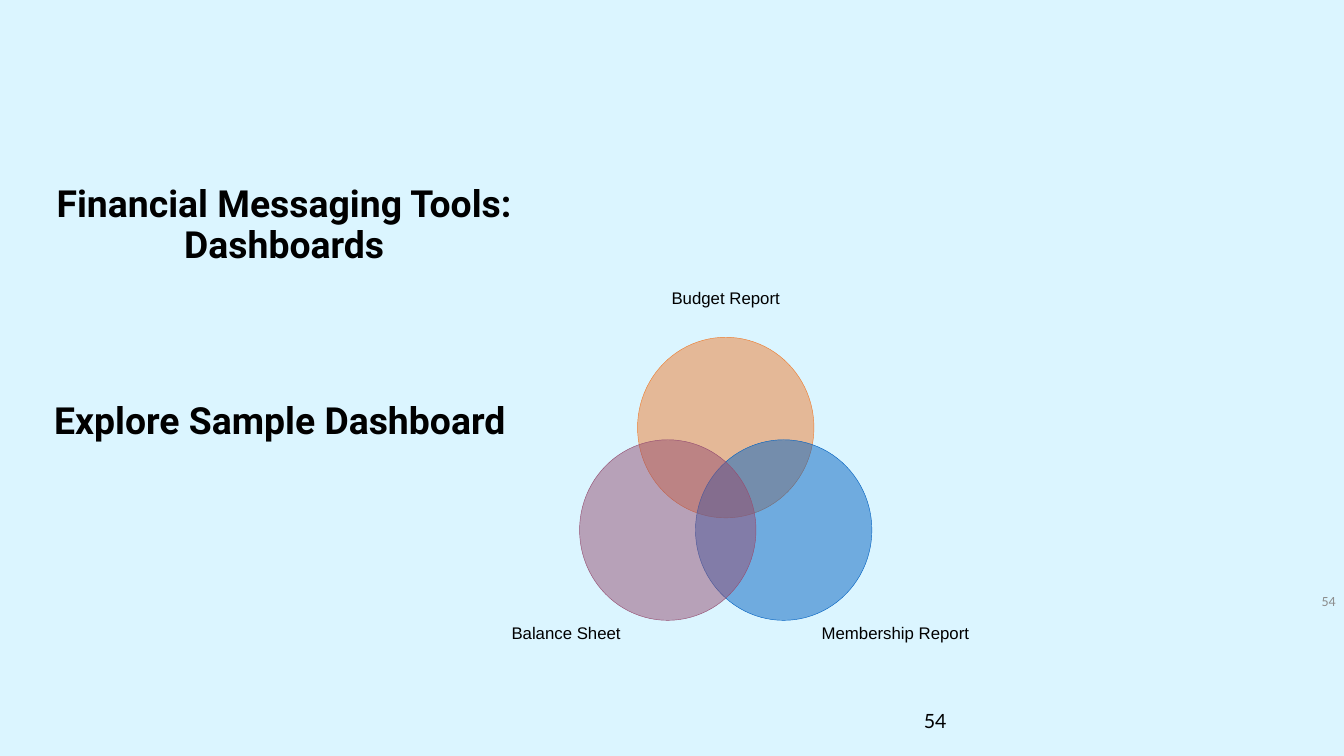
from lxml.etree import SubElement
from pptx import Presentation
from pptx.dml.color import RGBColor
from pptx.enum.shapes import MSO_SHAPE
from pptx.enum.text import MSO_ANCHOR, MSO_AUTO_SIZE, PP_ALIGN
from pptx.oxml.ns import qn
from pptx.util import Inches, Pt

COLUMNS, ROWS = 16, 9
COLOURS = {
    "background": "DBF5FF",
    "text": "000000",
    "muted": "8C8C8C",
    "budget": "ED7D31",
    "membership": "0563C1",
    "balance": "954F72",
}


def colour(name):
    return RGBColor.from_string(COLOURS[name])


def write(box, text, font="Arial", size=14.4, ink="text", bold=False,
          align=PP_ALIGN.LEFT, anchor=MSO_ANCHOR.TOP, spacing=None, inset=None):
    """Put one formatted paragraph in a box."""
    frame = box.text_frame
    frame.word_wrap = True
    frame.auto_size = MSO_AUTO_SIZE.NONE
    frame.vertical_anchor = anchor
    if inset is not None:
        frame.margin_left = frame.margin_right = inset
        frame.margin_top = frame.margin_bottom = inset
    para = frame.paragraphs[0]
    para.text = text
    para.alignment = align
    para.space_before = Pt(0)
    if spacing:
        para.line_spacing = spacing
    for span in para.runs:
        span.font.name = font
        span.font.size = Pt(size)
        span.font.bold = bold
        span.font.color.rgb = colour(ink)
    return para


class Slide:
    """A page with a grid of one-inch columns and rows."""

    def __init__(self, deck):
        self.column = deck.slide_width // COLUMNS
        self.row = deck.slide_height // ROWS
        self.page = deck.slides.add_slide(deck.slide_layouts[1])
        self.page.background.fill.solid()
        self.page.background.fill.fore_color.rgb = colour("background")

    def area(self, left, top, width, height):
        return (round(left * self.column), round(top * self.row),
                round(width * self.column), round(height * self.row))

    def heading(self, index, text, *area):
        box = self.page.placeholders[index]
        box.left, box.top, box.width, box.height = self.area(*area)
        para = write(box, text, font="Roboto", size=32, bold=True,
                     align=PP_ALIGN.CENTER, spacing=0.9)
        properties = para._p.get_or_add_pPr()
        properties.set("marL", "0")
        properties.set("indent", "0")
        SubElement(properties, qn("a:buNone"))

    def text(self, text, *area, **style):
        box = self.page.shapes.add_textbox(*self.area(*area))
        write(box, text, **style)

    def circle(self, name, x, y, width, height):
        oval = self.page.shapes.add_shape(
            MSO_SHAPE.OVAL, *self.area(x - width / 2, y - height / 2, width, height))
        oval.shadow.inherit = False
        oval.fill.solid()
        oval.fill.fore_color.rgb = colour(name)
        tint = oval.fill._xPr.find(f"{qn('a:solidFill')}/{qn('a:srgbClr')}")
        SubElement(tint, qn("a:alpha"), val="50000")
        oval.line.color.rgb = colour(name)
        oval.line.width = Pt(0.37)

    def label(self, text, x, y, width=2.4, height=0.54):
        self.text(text, x - width / 2, y - height / 2, width, height,
                  align=PP_ALIGN.CENTER, anchor=MSO_ANCHOR.MIDDLE, inset=0)


def main():
    deck = Presentation()
    deck.slide_width, deck.slide_height = Inches(COLUMNS), Inches(ROWS)
    slide = Slide(deck)

    # Title and prompt
    slide.heading(0, "Financial Messaging Tools:\vDashboards", 0.5, 2.16, 5.77, 1.54)
    slide.heading(1, "Explore Sample Dashboard", 0.5, 4.74, 5.67, 1.33)

    # Venn diagram: circle offsets from its middle, then label centres
    middle_x, middle_y, shift_x, shift_y = 8.64, 5.7, 0.69, 0.61
    for name, across, down, text, label_x, label_y in (
        ("budget", 0, -1, "Budget Report", 8.64, 3.54),
        ("membership", 1, 1, "Membership Report", 10.66, 7.53),
        ("balance", -1, 1, "Balance Sheet", 6.74, 7.53),
    ):
        slide.circle(name, middle_x + across * shift_x, middle_y + down * shift_y,
                     2.1, 2.15)
        slide.label(text, label_x, label_y)

    # Page numbers
    slide.text("54", 13, 6.95, 3, 0.4, font="Calibri", size=12, ink="muted",
               align=PP_ALIGN.RIGHT, anchor=MSO_ANCHOR.MIDDLE)
    slide.text("54", 10.9, 8.39, 2.5, 0.6, font="Lato", size=16.8)

    deck.save("out.pptx")


if __name__ == "__main__":
    main()
